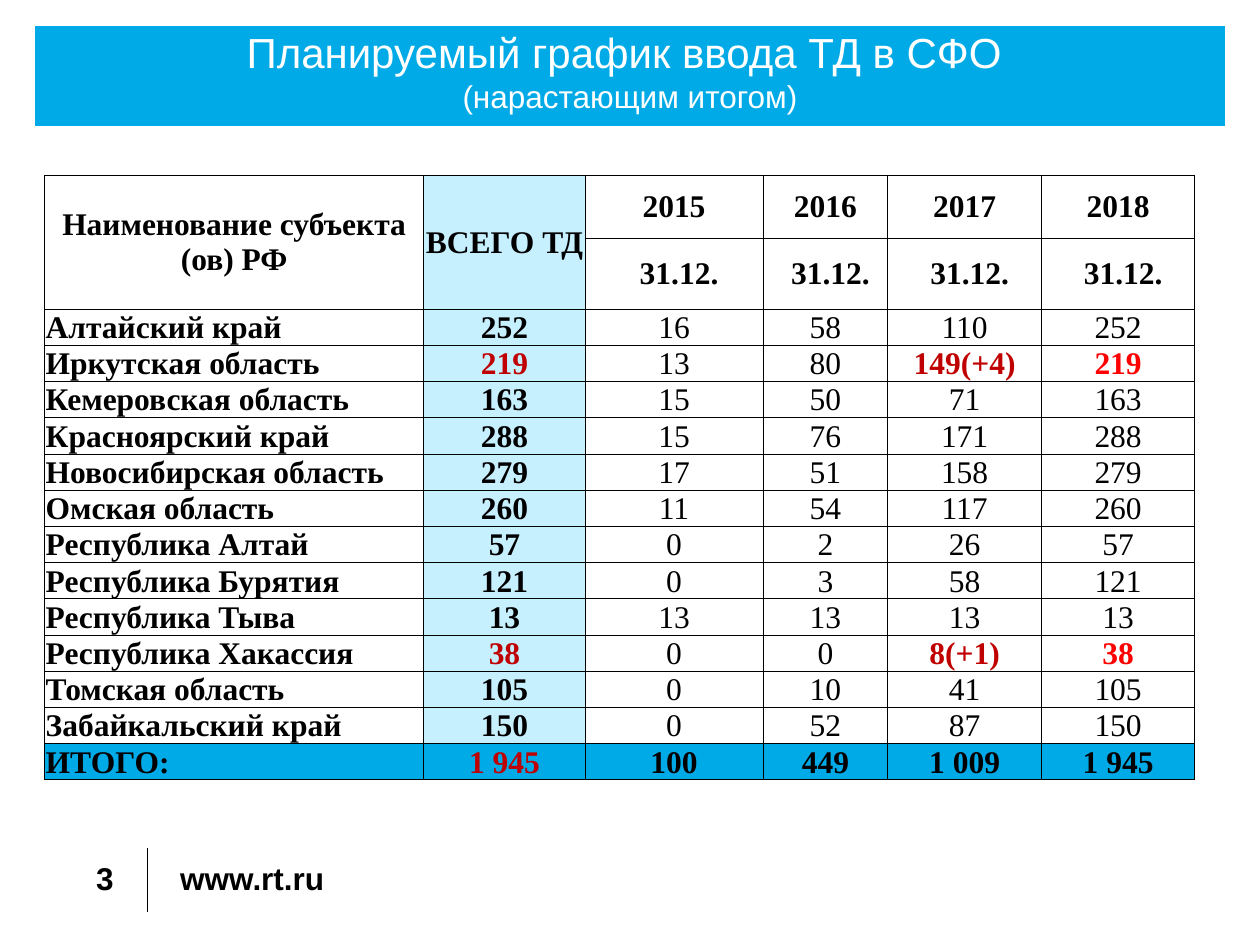
from lxml import etree
from pptx import Presentation
from pptx.dml.color import RGBColor
from pptx.enum import shapes, text
from pptx.oxml import ns
from pptx.util import Pt

BLUE, PALE, BLACK = "00AAE7", "C7F0FF", "000000"
DARK, RED, WHITE = "C00000", "FF0000", "FFFFFF"
MID, LEFT, RIGHT = text.PP_ALIGN.CENTER, text.PP_ALIGN.LEFT, text.PP_ALIGN.RIGHT

WIDTHS = [216.8, 92.2, 101.6, 71.4, 87.8, 87.6]
HEADS = ["Наименование субъекта (ов) РФ", "ВСЕГО ТД ", "2015", "2016", "2017", "2018"]
DATES = ["", ""] + ["31.12."] * 4
REGIONS = [
    ["Алтайский край", "252", "16", "58", "110", "252"],
    ["Иркутская область", "219", "13", "80", "149(+4)", "219"],
    ["Кемеровская область", "163", "15", "50", "71", "163"],
    ["Красноярский край", "288", "15", "76", "171", "288"],
    ["Новосибирская область", "279", "17", "51", "158", "279"],
    ["Омская область", "260", "11", "54", "117", "260"],
    ["Республика Алтай", "57", "0", "2", "26", "57"],
    ["Республика Бурятия", "121", "0", "3", "58", "121"],
    ["Республика Тыва", "13", "13", "13", "13", "13"],
    ["Республика Хакассия", "38", "0", "0", "8(+1)", "38"],
    ["Томская область", "105", "0", "10", "41", "105"],
    ["Забайкальский край", "150", "0", "52", "87", "150"],
]
TOTAL = ["ИТОГО:", "1 945", "100", "449", "1 009", "1 945"]


def color(code):
    return RGBColor.from_string(code)


def style(run, size, face, code, bold):
    font = run.font
    font.size, font.name, font.bold = Pt(size), face, bold
    font.color.rgb = color(code)


def frame(cell):
    """Thin black lines on all four sides of a cell."""
    props = cell._tc.get_or_add_tcPr()
    for side in "LRTB":
        line = etree.SubElement(props, ns.qn("a:ln" + side), w=str(Pt(0.5)))
        fill = etree.SubElement(line, ns.qn("a:solidFill"))
        etree.SubElement(fill, ns.qn("a:srgbClr"), val=BLACK)


def header(slide, x, y, w, h):
    title = slide.shapes.title
    title.left, title.top, title.width, title.height = Pt(x), Pt(y), Pt(w), Pt(h)
    title.fill.solid()
    title.fill.fore_color.rgb = color(BLUE)
    body = title.text_frame
    body.text = "Планируемый график ввода ТД в СФО \v(нарастающим итогом)"
    body.word_wrap = True
    body.auto_size = text.MSO_AUTO_SIZE.NONE
    body.vertical_anchor = text.MSO_ANCHOR.TOP
    body.margin_left = body.margin_right = body.margin_top = body.margin_bottom = 0
    para = body.paragraphs[0]
    para.alignment = MID
    for run, size in zip(para.runs, (24, 18)):
        style(run, size, "Arial", WHITE, False)


def look(row, col, last, vals):
    """Fill, text colour and weight of a cell."""
    fill = BLUE if row == last else PALE if col == 1 else None
    marked = "(+" in vals[4]
    code = BLACK
    if col == 1 and (marked or row == last) or col == 4 and marked:
        code = DARK
    elif col == 5 and marked:
        code = RED
    bold = row < 2 or row == last or col < 2 or code != BLACK
    return fill, code, bold


def schedule(slide, x, y, w, h):
    rows = [HEADS, DATES] + REGIONS + [TOTAL]
    last = len(rows) - 1
    table = slide.shapes.add_table(len(rows), len(WIDTHS), Pt(x), Pt(y), Pt(w), Pt(h)).table
    table.first_row = table.horz_banding = False
    tops = [36, 40.6]
    step = (h - sum(tops)) / (len(rows) - len(tops))
    for col, width in zip(table.columns, WIDTHS):
        col.width = Pt(width)
    for i, vals in enumerate(rows):
        table.rows[i].height = Pt(tops[i] if i < len(tops) else step)
        for j, val in enumerate(vals):
            cell = table.cell(i, j)
            fill, code, bold = look(i, j, last, vals)
            frame(cell)
            if fill:
                cell.fill.solid()
                cell.fill.fore_color.rgb = color(fill)
            else:
                cell.fill.background()
            name = j == 0 and i > 1
            cell.vertical_anchor = text.MSO_ANCHOR.BOTTOM if name else text.MSO_ANCHOR.MIDDLE
            cell.margin_left = Pt(6.5 if i == 1 and j > 1 else 0.75)
            cell.margin_right = cell.margin_top = Pt(0.75)
            cell.margin_bottom = 0
            para = cell.text_frame.paragraphs[0]
            para.text = val
            para.alignment = LEFT if name else MID
            for run in para.runs:
                style(run, 18, "Times New Roman", code, bold)
    # The first two headings cover both header rows
    for j in range(2):
        table.cell(0, j).merge(table.cell(1, j))


def label(slide, words, x, y, w, h, align, anchor):
    body = slide.shapes.add_textbox(Pt(x), Pt(y), Pt(w), Pt(h)).text_frame
    body.word_wrap = True
    body.margin_left = body.margin_right = body.margin_top = body.margin_bottom = 0
    body.vertical_anchor = anchor
    body.text = words
    para = body.paragraphs[0]
    para.alignment = align
    style(para.runs[0], 18, "Arial", BLACK, True)


def footer(slide, x, y, w, h):
    # Divider between page number and address
    mid = Pt(x + 64.8)
    rule = slide.shapes.add_connector(shapes.MSO_CONNECTOR.STRAIGHT, mid, Pt(y), mid, Pt(y + h))
    rule.line.color.rgb = color(BLACK)
    rule.line.width = Pt(0.5)
    etree.SubElement(rule._element.spPr, ns.qn("a:effectLst"))
    label(slide, "www.rt.ru", x + 83.5, y + 6.5, w - 83.5, 21.6, LEFT, text.MSO_ANCHOR.TOP)
    label(slide, "3", x, y + 3, 45.4, 28.8, RIGHT, text.MSO_ANCHOR.MIDDLE)


def main():
    deck = Presentation()
    deck.slide_width, deck.slide_height = Pt(720), Pt(540)
    slide = deck.slides.add_slide(deck.slide_layouts[5])
    header(slide, 20, 15, 680, 57)
    schedule(slide, 25.4, 100, sum(WIDTHS), 345.6)
    footer(slide, 19.5, 484.5, 219.5, 36.7)
    deck.save("out.pptx")


if __name__ == "__main__":
    main()
